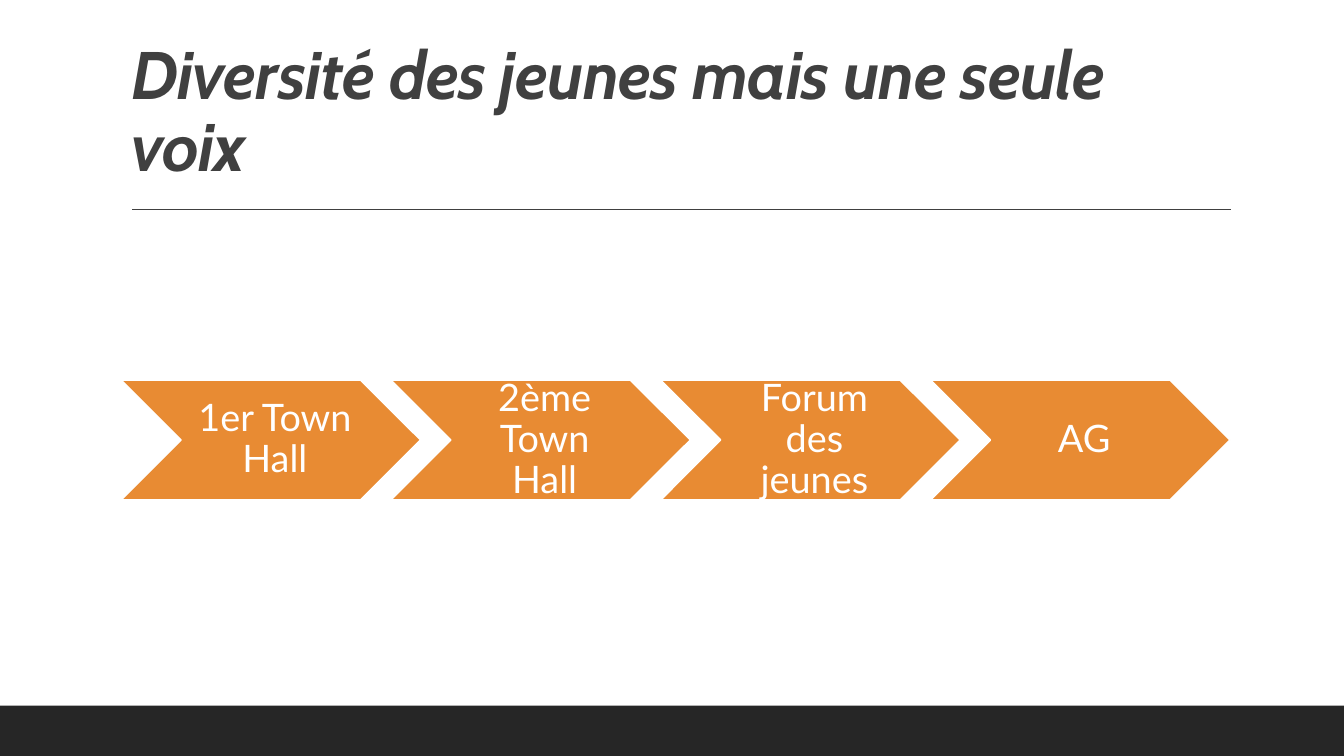
import pptx
import pptx.util
import pptx.dml.color
import pptx.enum.shapes
import pptx.enum.text
import pptx.oxml

Inches, Pt = pptx.util.Inches, pptx.util.Pt
RGBColor = pptx.dml.color.RGBColor
MSO_SHAPE = pptx.enum.shapes.MSO_SHAPE
MSO_ANCHOR = pptx.enum.text.MSO_ANCHOR
PP_ALIGN = pptx.enum.text.PP_ALIGN

WHITE = RGBColor(0xFF, 0xFF, 0xFF)
ORANGE = RGBColor(0xE8, 0x8B, 0x33)
GREY = RGBColor(0x40, 0x40, 0x40)
BLACK = RGBColor(0x26, 0x26, 0x26)

WIDTH, HEIGHT = 13.33, 7.5
STEPS = ["1er Town Hall", "2ème Town Hall", "Forum des jeunes", "AG"]
OVERLAP = 0.1  # share of a chevron's width shared with the next one


def style_text(tf, text, font, size, color, align, anchor):
    tf.text = text
    tf.word_wrap = True
    tf.auto_size = pptx.enum.text.MSO_AUTO_SIZE.NONE
    tf.vertical_anchor = anchor
    p = tf.paragraphs[0]
    p.alignment = align
    p.line_spacing = 0.9
    r = p.runs[0]
    r.font.name, r.font.size = font, Pt(size)
    r.font.color.rgb = color
    return r


def add_footer_band(slide, left, top, width, height):
    sp = slide.shapes.add_shape(MSO_SHAPE.RECTANGLE, Inches(left), Inches(top),
                                Inches(width), Inches(height))
    sp.shadow.inherit = False
    sp.fill.solid()
    sp.fill.fore_color.rgb = BLACK
    sp.line.fill.background()


def add_heading(slide, text, left, top, width, height):
    """Fill the title and draw the rule below it."""
    title = slide.shapes.title
    title.left, title.top = Inches(left), Inches(top)
    title.width, title.height = Inches(width), Inches(height)
    r = style_text(title.text_frame, text, "Cabin", 48, GREY,
                   PP_ALIGN.LEFT, MSO_ANCHOR.BOTTOM)
    r.font.bold = r.font.italic = True
    r.font._element.set("spc", "-50")

    rule_y = Inches(top + height + 0.18)
    rule = slide.shapes.add_connector(
        pptx.enum.shapes.MSO_CONNECTOR.STRAIGHT,
        Inches(left + 0.11), rule_y, Inches(left + width + 0.01), rule_y)
    rule.line.color.rgb = GREY
    rule.line.width = Pt(1)
    rule._element.spPr.append(pptx.oxml.parse_xml(
        '<a:effectLst xmlns:a="http://schemas.openxmlformats.org/drawingml/2006/main"/>'))


def add_process(slide, steps, left, top, width, height):
    """Spread one chevron per step over the box, each overlapping the next."""
    step_width = width / (len(steps) - OVERLAP * (len(steps) - 1))
    pitch = step_width * (1 - OVERLAP)
    for i, step in enumerate(steps):
        sp = slide.shapes.add_shape(MSO_SHAPE.CHEVRON, Inches(left + i * pitch),
                                    Inches(top), Inches(step_width), Inches(height))
        sp.shadow.inherit = False
        sp.fill.solid()
        sp.fill.fore_color.rgb = ORANGE
        sp.line.color.rgb = WHITE
        sp.line.width = Pt(1.25)
        tf = sp.text_frame
        tf.margin_left = Inches(0.12)
        tf.margin_right = tf.margin_top = tf.margin_bottom = Inches(0.04)
        style_text(tf, step, "Lato", 27, WHITE, PP_ALIGN.CENTER, MSO_ANCHOR.MIDDLE)


def main():
    prs = pptx.Presentation()
    prs.slide_width, prs.slide_height = Inches(WIDTH), Inches(HEIGHT)
    slide = prs.slides.add_slide(prs.slide_layouts.get_by_name("Title Only"))
    add_footer_band(slide, 0, HEIGHT - 0.5, WIDTH, 0.5)
    add_heading(slide, "Diversité des jeunes mais une seule voix", 1.2, 0.31, 11, 1.59)
    add_process(slide, STEPS, 1.2, 3.77, 11, 1.19)
    prs.save("out.pptx")


if __name__ == "__main__":
    main()
